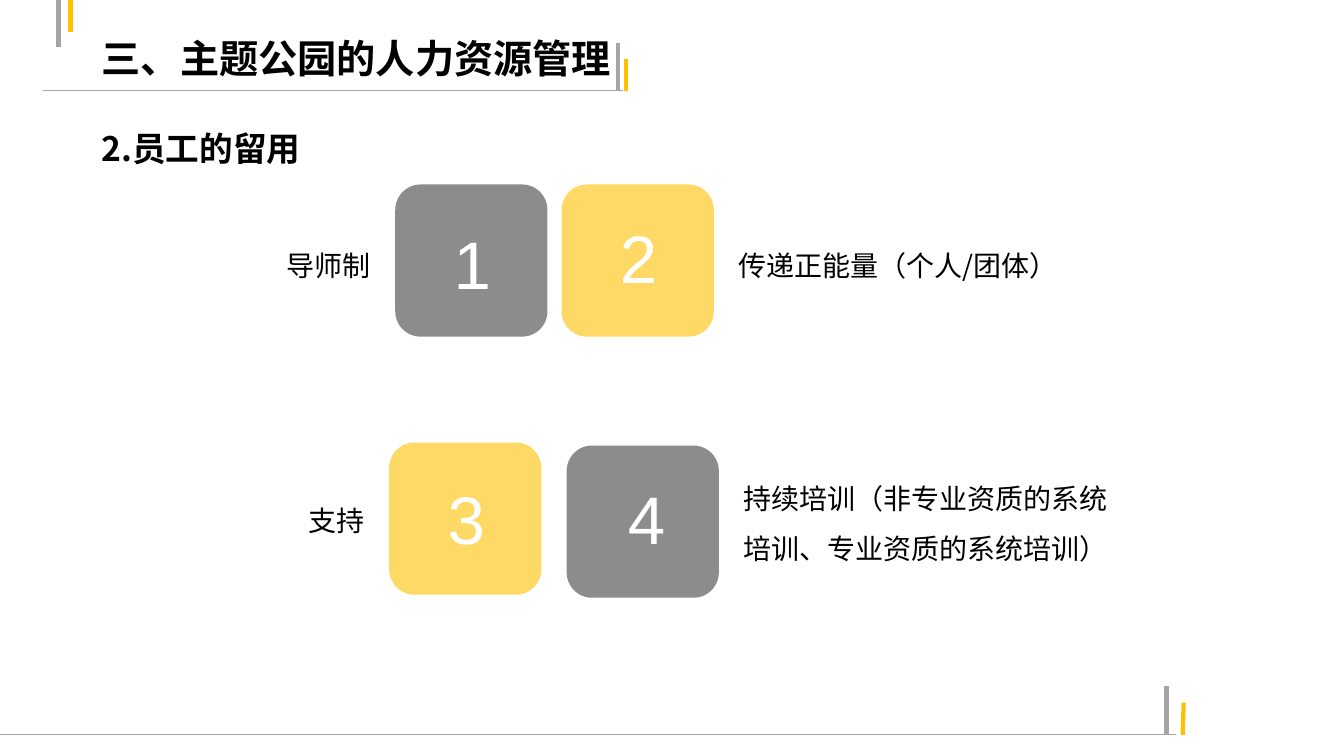
from lxml import etree
from pptx import Presentation
from pptx.dml.color import RGBColor
from pptx.enum.shapes import MSO_CONNECTOR, MSO_SHAPE
from pptx.enum.text import MSO_ANCHOR, PP_ALIGN
from pptx.oxml.ns import qn
from pptx.util import Inches, Pt

STRAIGHT = MSO_CONNECTOR.STRAIGHT
ROUNDED = MSO_SHAPE.ROUNDED_RECTANGLE
TOP = MSO_ANCHOR.TOP
LEFT, RIGHT = PP_ALIGN.LEFT, PP_ALIGN.RIGHT

BLACK = RGBColor(0x00, 0x00, 0x00)
WHITE = RGBColor(0xFF, 0xFF, 0xFF)
GREY = RGBColor(0xA5, 0xA5, 0xA5)
CHARCOAL = RGBColor(0x40, 0x40, 0x40)
GOLD = RGBColor(0xFF, 0xC0, 0x00)
CJK, LATIN = "Noto Sans CJK SC", "Arial"

CARD_SIZE = 1.51
LABEL_WIDTH = 4.35


def write(holder, text, size, font=CJK, color=BLACK, bold=False,
          align=LEFT, spacing=1.0, margins=(0.1, 0.05), wrap=True):
    """Fill a text holder with one formatted paragraph."""
    frame = holder.text_frame
    side, edge = (Inches(margin) for margin in margins)
    frame_format = {"word_wrap": wrap, "vertical_anchor": TOP,
                    "margin_left": side, "margin_right": side,
                    "margin_top": edge, "margin_bottom": edge}
    for name, value in frame_format.items():
        setattr(frame, name, value)
    paragraph = frame.paragraphs[0]
    paragraph.alignment = align
    paragraph.line_spacing = spacing
    run = paragraph.add_run()
    run.text = text
    for name, value in {"size": Pt(size), "name": font, "bold": bold}.items():
        setattr(run.font, name, value)
    run.font.color.rgb = color
    east_asian = etree.SubElement(run.font._element, qn("a:ea"))
    east_asian.set("typeface", font)


prs = Presentation()
prs.slide_width, prs.slide_height = Inches(13.33), Inches(7.5)
slide = prs.slides.add_slide(prs.slide_layouts[5])
shapes = slide.shapes

# Rules and accent bars: start x, start y, end x, end y, colour, width
accents = [
    (0.58, 0.47, 0.58, 0, GREY, 3),
    (0.7, 0.32, 0.7, 0, GOLD, 3),
    (0, 7.29, 11.66, 7.29, GREY, 0.75),
    (11.57, 7.29, 11.57, 6.81, GREY, 3),
    (11.73, 7.29, 11.74, 6.97, GOLD, 3),
    (0.43, 0.9, 6.18, 0.9, GREY, 0.75),
    (6.13, 0.9, 6.13, 0.43, GREY, 3),
    (6.21, 0.9, 6.21, 0.59, GOLD, 3),
]
for *ends, color, width in accents:
    accent = shapes.add_connector(STRAIGHT, *(Inches(end) for end in ends))
    accent.line.color.rgb = color
    accent.line.width = Pt(width)
    etree.SubElement(accent._element.spPr, qn("a:effectLst"))

title = shapes.title
title.left, title.top = Inches(0.91), Inches(0.29)
title.width, title.height = Inches(5.31), Inches(0.57)
write(title, "三、主题公园的人力资源管理", 28, bold=True, wrap=False)

subtitle = shapes.add_textbox(Inches(0.91), Inches(1.22), Inches(5.57), Inches(0.5))
write(subtitle, "2.员工的留用", 24, bold=True)

# Cards: card position, colour, number position, label top and height, label
cards = [
    (3.92, 1.83, CHARCOAL, 4.4, 2.16, 2.18, 0.75, "导师制"),
    (5.57, 1.83, GOLD, 6.05, 2.1, 2.18, 1.25, "传递正能量（个人/团体）"),
    (3.86, 4.39, GOLD, 4.34, 4.69, 4.71, 1.25, "支持"),
    (5.62, 4.42, CHARCOAL, 6.13, 4.69, 4.49, 1.76,
     "持续培训（非专业资质的系统培训、专业资质的系统培训）"),
]
for number, (x, y, color, number_x, number_y, label_y, label_height, label) in enumerate(cards, 1):
    card = shapes.add_shape(ROUNDED, Inches(x), Inches(y),
                            Inches(CARD_SIZE), Inches(CARD_SIZE))
    card.shadow.inherit = False
    card.fill.solid()
    card.fill.fore_color.rgb = color
    card.line.fill.background()
    tint = card._element.spPr.find(qn("a:solidFill"))[0]
    etree.SubElement(tint, qn("a:alpha")).set("val", "60000")

    digit = shapes.add_textbox(Inches(number_x), Inches(number_y),
                               Inches(0.58), Inches(0.91))
    write(digit, str(number), 48, font=LATIN, color=WHITE)

    on_left = number % 2 == 1
    label_x = x - LABEL_WIDTH if on_left else x + CARD_SIZE
    caption = shapes.add_textbox(Inches(label_x), Inches(label_y),
                                 Inches(LABEL_WIDTH), Inches(label_height))
    write(caption, label, 20, align=RIGHT if on_left else LEFT,
          spacing=1.5, margins=(0.24, 0.12))

prs.save("out.pptx")
